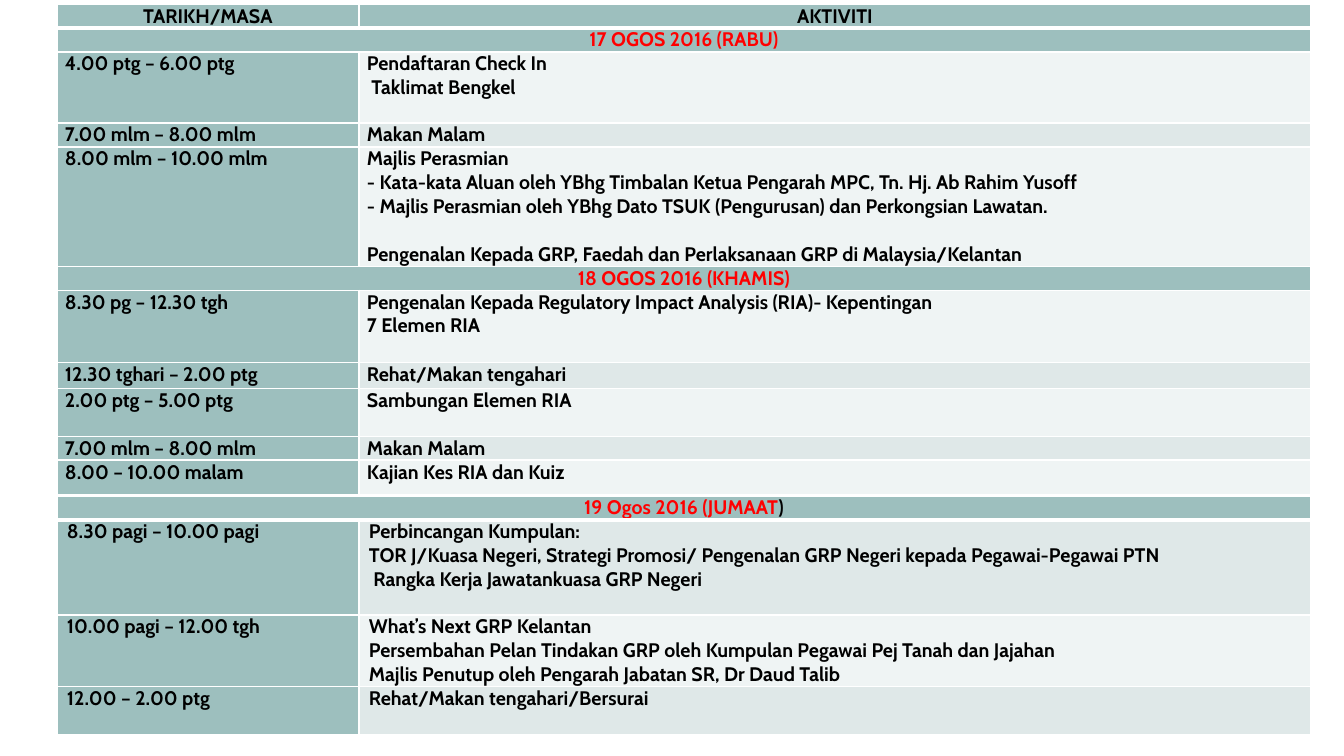
import pptx
import pptx.dml.color
import pptx.enum.text
import pptx.util
from lxml import etree
from pptx.oxml.ns import qn


def px(length):
    return pptx.util.Emu(round(length * 914400 / 100.8))


def color(hex_string):
    return pptx.dml.color.RGBColor.from_string(hex_string)


TEAL, LIGHT, PALE = "9DBFBE", "DFE8E8", "EFF4F4"
BLACK, RED, WHITE = "000000", "FF0000", "FFFFFF"
LEFT, COLUMN_WIDTHS = 57, (302, 952)
ALIGN = pptx.enum.text.PP_ALIGN
ANCHOR = pptx.enum.text.MSO_ANCHOR

# Each row: height, time, activity lines; a date row has no activities.
# An empty line is a gap above the next one; "|" ends the red part of a date.
first_days = [
    (24, "TARIKH/MASA", ["AKTIVITI"]),
    (24, "17 OGOS 2016 (RABU)", []),
    (71, "4.00 ptg – 6.00 ptg", ["Pendaftaran Check In", " Taklimat Bengkel"]),
    (24, "7.00 mlm – 8.00 mlm", ["Makan Malam"]),
    (119, "8.00 mlm – 10.00 mlm", [
        "Majlis Perasmian",
        "- Kata-kata Aluan oleh YBhg Timbalan Ketua Pengarah MPC, Tn. Hj. Ab Rahim Yusoff",
        "- Majlis Perasmian oleh YBhg Dato TSUK (Pengurusan) dan Perkongsian Lawatan.",
        "",
        "Pengenalan Kepada GRP, Faedah dan Perlaksanaan GRP di Malaysia/Kelantan"]),
    (24, "18 OGOS 2016 (KHAMIS)", []),
    (72, "8.30 pg – 12.30 tgh", [
        "Pengenalan Kepada Regulatory Impact Analysis (RIA)- Kepentingan",
        "7 Elemen RIA"]),
    (26, "12.30 tghari – 2.00 ptg", ["Rehat/Makan tengahari"]),
    (48, "2.00 ptg – 5.00 ptg", ["Sambungan Elemen RIA"]),
    (24, "7.00 mlm – 8.00 mlm", ["Makan Malam"]),
    (35, "8.00 – 10.00 malam", ["Kajian Kes RIA dan Kuiz"]),
]
last_day = [
    (24, "19 Ogos 2016 (JUMAAT|)", []),
    (95, "8.30 pagi – 10.00 pagi", [
        "Perbincangan Kumpulan:",
        "TOR J/Kuasa Negeri, Strategi Promosi/ Pengenalan GRP Negeri kepada Pegawai-Pegawai PTN",
        " Rangka Kerja Jawatankuasa GRP Negeri"]),
    (71, "10.00 pagi – 12.00 tgh", [
        "What’s Next GRP Kelantan",
        "Persembahan Pelan Tindakan GRP oleh Kumpulan Pegawai Pej Tanah dan Jajahan",
        "Majlis Penutup oleh Pengarah Jabatan SR, Dr Daud Talib"]),
    (48, "12.00 – 2.00 ptg", ["Rehat/Makan tengahari/Bersurai"]),
]

presentation = pptx.Presentation()
presentation.slide_width = px(1344)
presentation.slide_height = px(756)
slide = presentation.slides.add_slide(presentation.slide_layouts[6])

# Schedule tables: top, side margin of the cells, rows
for top, margin, rows in ((4, 8, first_days), (496, 10, last_day)):
    frame = slide.shapes.add_table(
        len(rows), 2, px(LEFT), px(top), px(sum(COLUMN_WIDTHS)),
        px(sum(row[0] for row in rows)))
    table = frame.table
    for column, width in zip(table.columns, COLUMN_WIDTHS):
        column.width = px(width)

    for row_index, (height, time, activities) in enumerate(rows):
        table.rows[row_index].height = px(height)
        is_date = not activities
        is_header = row_index == 0
        if is_date:
            table.cell(row_index, 0).merge(table.cell(row_index, 1))

        for column_index, lines in enumerate(([time], activities)):
            cell = table.cell(row_index, column_index)
            cell.margin_left = cell.margin_right = px(margin)
            cell.margin_top = cell.margin_bottom = 0
            cell.vertical_anchor = (
                ANCHOR.MIDDLE if is_header and not is_date else ANCHOR.TOP)

            # Borders, thick below the first row
            properties = cell._tc.get_or_add_tcPr()
            for side in ("L", "R", "T", "B"):
                thick = (side, row_index) in (("B", 0), ("T", 1))
                line = etree.SubElement(
                    properties, qn("a:ln" + side), w=str(pptx.util.Pt(3 if thick else 1)))
                fill = etree.SubElement(line, qn("a:solidFill"))
                etree.SubElement(fill, qn("a:srgbClr"), val=WHITE)

            # Banded fill
            band = LIGHT if row_index % 2 else PALE
            plain = column_index == 0 or is_date or is_header
            cell.fill.solid()
            cell.fill.fore_color.rgb = color(TEAL if plain else band)

            # Text
            text_frame = cell.text_frame
            shown = [text for text in lines if text]
            for line_index, text in enumerate(shown):
                paragraph = (text_frame.add_paragraph() if line_index
                             else text_frame.paragraphs[0])
                if is_date or is_header:
                    paragraph.alignment = ALIGN.CENTER
                else:
                    paragraph.alignment = ALIGN.LEFT if column_index else ALIGN.JUSTIFY
                if "" in lines and line_index == lines.index(""):
                    paragraph.space_before = pptx.util.Pt(17)
                for part_index, part in enumerate(text.split("|")):
                    run = paragraph.add_run()
                    run.text = part
                    run.font.name = "Cabin"
                    run.font.size = pptx.util.Pt(14)
                    run.font.bold = True
                    is_red = is_date and part_index == 0
                    run.font.color.rgb = color(RED if is_red else BLACK)

presentation.save("out.pptx")
